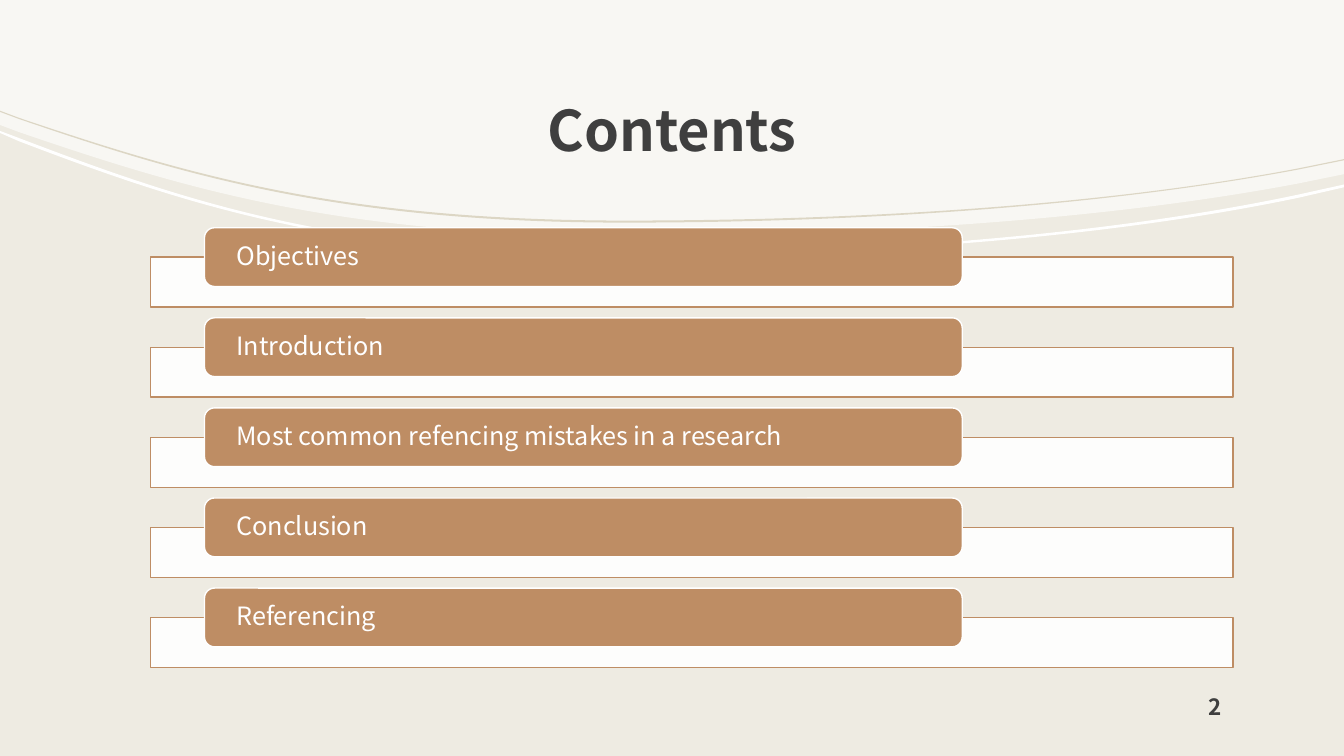
from lxml import etree
from pptx import Presentation
from pptx.dml.color import RGBColor
from pptx.enum.shapes import MSO_SHAPE
from pptx.enum.text import MSO_ANCHOR, PP_ALIGN
from pptx.oxml.ns import qn
from pptx.util import Cm, Pt

RECT = MSO_SHAPE.RECTANGLE
ROUND = MSO_SHAPE.ROUNDED_RECTANGLE
MIDDLE = MSO_ANCHOR.MIDDLE
BOTTOM = MSO_ANCHOR.BOTTOM
LEFT = PP_ALIGN.LEFT
CENTER = PP_ALIGN.CENTER

FONT = "Noto Sans CJK JP"
WIDTH, HEIGHT = 33.87, 19.05
COLORS = {"back": "EEEBE2", "white": "FFFFFF", "tan": "DCD6C4",
          "brown": "BE8D64", "dark": "3F3F3F"}
TOPICS = ["Objectives", "Introduction",
          "Most common refencing mistakes in a research",
          "Conclusion", "Referencing"]

KNOTS = [0, 0.48, 4.55, 8.46, 15.75, 22.23, 28.17, 32.74, WIDTH]
BENDS = (2, 5, 11, 14)
VEIL = [3.15, 3.33, 4.72, 5.94, 5.94, 5.94, 5.49, 4.62, 4.39]
WHITE_UP = [3.3, 3.48, 5.03, 6.4, 6.4, 6.4, 5.87, 4.9, 4.65]
WHITE_LOW = [3.35, 3.56, 5.11, 6.45, 6.45, 6.45, 5.94, 4.98, 4.72]
TAN_UP = [2.79, 2.97, 4.34, 5.56, 5.56, 5.56, 5.11, 4.24, 4.01]
TAN_LOW = [2.82, 3.0, 4.39, 5.61, 5.61, 5.61, 5.13, 4.27, 4.04]


def paint(shape, fill, line=None, alpha=100):
    shape.shadow.inherit = False
    shape.fill.solid()
    shape.fill.fore_color.rgb = RGBColor.from_string(COLORS[fill])
    if alpha < 100:
        color = shape.fill._xPr.find(qn("a:solidFill"))[0]
        etree.SubElement(color, qn("a:alpha"), val=str(alpha * 1000))
    if line:
        shape.line.color.rgb = RGBColor.from_string(COLORS[line])
        shape.line.width = Pt(1)
    else:
        shape.line.fill.background()


def write(shape, text, size, color, bold=False, align=LEFT, anchor=MIDDLE,
          space=1.0, pads=(0.3, 0.3, 0.3, 0.25)):
    frame = shape.text_frame
    frame.word_wrap = True
    frame.vertical_anchor = anchor
    (frame.margin_left, frame.margin_top,
     frame.margin_right, frame.margin_bottom) = map(Cm, pads)
    para = frame.paragraphs[0]
    para.text = text
    para.alignment = align
    para.line_spacing = space
    para.font.name = FONT
    para.font.size = Pt(size)
    para.font.bold = bold
    para.font.color.rgb = RGBColor.from_string(COLORS[color])


def bend(shape):
    lines = list(shape._element.iter(qn("a:lnTo")))
    for start in BENDS:
        group = lines[start - 1:start + 2]
        if len(group) < 3:
            break
        first = group[0]
        first.addprevious(curve := etree.Element(qn("a:cubicBezTo")))
        for line in group:
            curve.append(line[0])
            line.getparent().remove(line)


def add_wave(slide, left, top, edge, back, fill, alpha=100):
    pts = [(Cm(left + x), Cm(top + y)) for x, y in list(zip(KNOTS, edge)) + back]
    form = slide.shapes.build_freeform(*pts[0])
    form.add_line_segments(pts[1:], close=True)
    wave = form.convert_to_shape()
    bend(wave)
    paint(wave, fill, alpha=alpha)


def add_header(slide, left, top, width):
    add_wave(slide, left, top, VEIL, [(width, 0), (0, 0)], "white", 60)
    for upper, lower, fill in ((WHITE_UP, WHITE_LOW, "white"),
                               (TAN_UP, TAN_LOW, "tan")):
        back = list(zip(KNOTS, lower))[::-1]
        add_wave(slide, left, top, upper, back, fill)
    title = slide.shapes.add_textbox(
        Cm(left + width * 0.1), Cm(top + 1.52), Cm(width * 0.8), Cm(2.9))
    write(title, "Contents", 40, "dark", bold=True, align=CENTER, space=1.3)


def add_topics(slide, left, top, width, pitch):
    for row, topic in enumerate(TOPICS):
        y = top + row * pitch
        bar = slide.shapes.add_shape(
            RECT, Cm(left), Cm(y + 0.74), Cm(width), Cm(1.26))
        paint(bar, "white", "brown", 90)
        pill = slide.shapes.add_shape(
            ROUND, Cm(left + width * 0.05), Cm(y), Cm(width * 0.7), Cm(1.48))
        pill.adjustments[0] = 0.17
        paint(pill, "brown", "white")
        write(pill, topic, 18, "white", space=0.9, pads=(0.73, 0, 0.73, 0))


def add_number(slide, left, top, width, height):
    box = slide.shapes.add_textbox(Cm(left), Cm(top), Cm(width), Cm(height))
    write(box, "2", 16, "dark", bold=True, anchor=BOTTOM)


def main():
    deck = Presentation()
    deck.slide_width, deck.slide_height = Cm(WIDTH), Cm(HEIGHT)
    slide = deck.slides.add_slide(deck.slide_layouts[6])
    slide.background.fill.solid()
    slide.background.fill.fore_color.rgb = RGBColor.from_string(COLORS["back"])
    add_header(slide, 0, 0, WIDTH)
    add_topics(slide, 3.79, 5.74, 27.28, 2.27)
    add_number(slide, 30.15, 17.13, 3.3, 1.27)
    deck.save("out.pptx")


if __name__ == "__main__":
    main()
